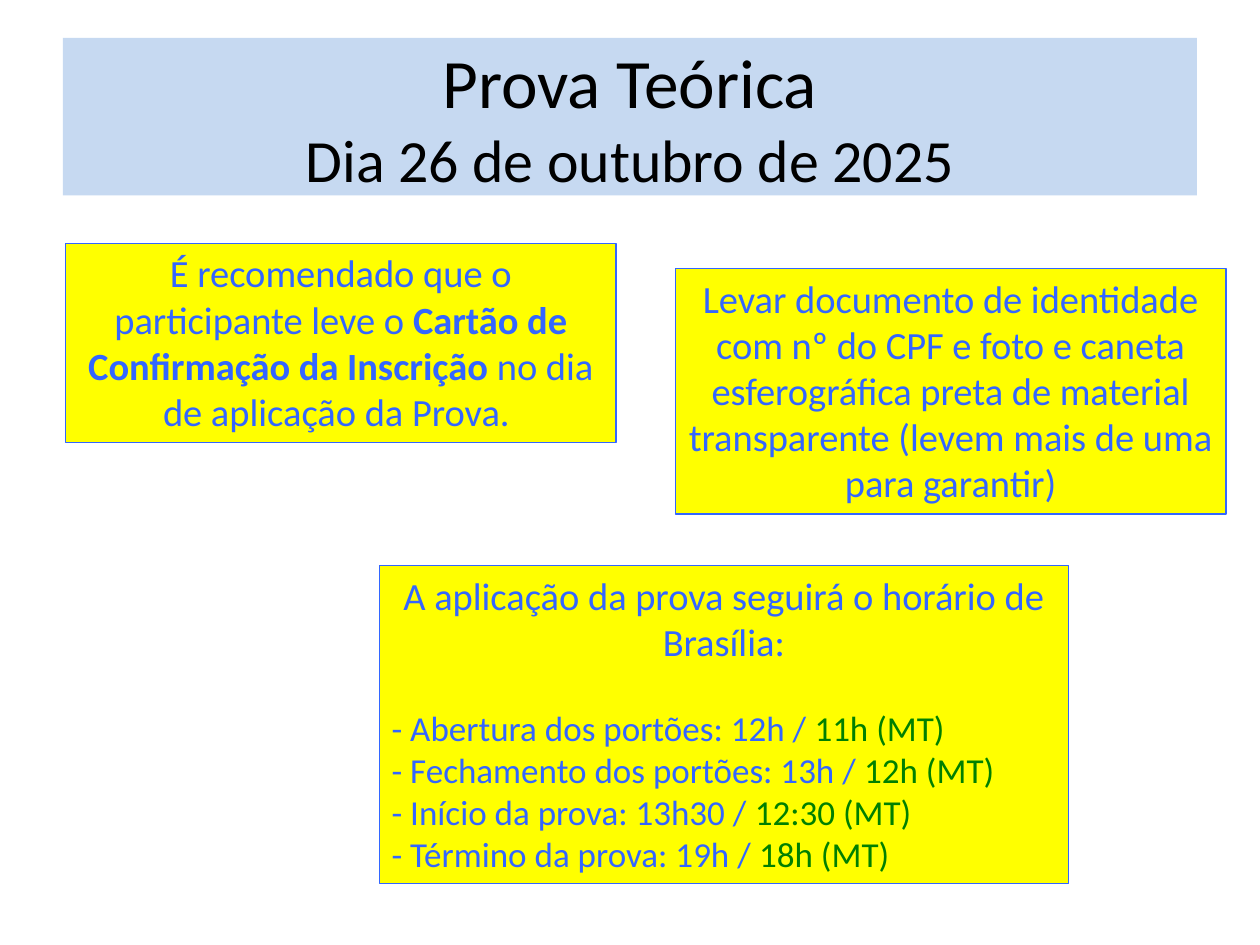
from pptx import Presentation
from pptx.dml.color import RGBColor
from pptx.enum.text import MSO_ANCHOR, PP_ALIGN
from pptx.util import Inches, Pt

CENTER, LEFT = PP_ALIGN.CENTER, PP_ALIGN.LEFT
MIDDLE, TOP = MSO_ANCHOR.MIDDLE, MSO_ANCHOR.TOP
BLANK_LAYOUT = 6
FONT = "Calibri"
COLORS = {
    "title_fill": "C6D9F1",
    "title_text": "000000",
    "note_fill": "FFFF00",
    "note_blue": "3366FF",
    "local_time": "008000",
}

SCHEDULE = [
    ("Abertura dos portões: 12h", "11h"),
    ("Fechamento dos portões: 13h", "12h"),
    ("Início da prova: 13h30", "12:30"),
    ("Término da prova: 19h", "18h"),
]


def color(name):
    return RGBColor.from_string(COLORS[name])


def add_box(slide, left, top, width, height, fill, line=None, anchor=TOP, margin=0.05):
    """Add a filled text box and return its text frame."""
    shape = slide.shapes.add_textbox(
        Inches(left), Inches(top), Inches(width), Inches(height))
    shape.fill.solid()
    shape.fill.fore_color.rgb = color(fill)
    if line:
        shape.line.color.rgb = color(line)
        shape.line.width = Pt(0.75)
    frame = shape.text_frame
    frame.word_wrap = True
    frame.vertical_anchor = anchor
    frame.margin_top = frame.margin_bottom = Inches(margin)
    return frame


def add_note(slide, left, top, width, height):
    return add_box(slide, left, top, width, height, "note_fill", line="note_blue")


def add_paragraph(frame, align=CENTER, space_before=0):
    """Use the empty first paragraph, or append a new one."""
    first = frame.paragraphs[0]
    paragraph = frame.add_paragraph() if first.runs else first
    paragraph.alignment = align
    paragraph.space_before = Pt(space_before)
    return paragraph


def add_text(paragraph, text, size=22, text_color="note_blue", bold=False):
    run = paragraph.add_run()
    run.text = text
    run.font.name = FONT
    run.font.size = Pt(size)
    run.font.bold = bold
    run.font.color.rgb = color(text_color)


def main():
    presentation = Presentation()
    presentation.slide_width = Inches(10)
    presentation.slide_height = Inches(7.5)
    slide = presentation.slides.add_slide(presentation.slide_layouts[BLANK_LAYOUT])

    # Title band
    title = add_box(slide, 0.5, 0.3, 9, 1.25, "title_fill", anchor=MIDDLE, margin=0)
    for text, size in (("Prova Teórica", 39.6), ("Dia 26 de outubro de 2025", 34.2)):
        add_text(add_paragraph(title), text, size=size, text_color="title_text")

    # Confirmation card
    card = add_paragraph(add_note(slide, 0.52, 1.93, 4.37, 1.58))
    add_text(card, "É recomendado que o participante leve o ")
    add_text(card, "Cartão de Confirmação da Inscrição", bold=True)
    add_text(card, " no dia de aplicação da Prova. ")

    # Exam times, in Brasília and local time
    times = add_note(slide, 3.01, 4.49, 5.47, 2.52)
    add_text(add_paragraph(times), "A aplicação da prova seguirá o horário de Brasília:")
    for index, (event, local_time) in enumerate(SCHEDULE):
        paragraph = add_paragraph(times, LEFT, space_before=0 if index else 24)
        add_text(paragraph, f"- {event} / ", size=20)
        add_text(paragraph, f"{local_time} (MT)", size=20, text_color="local_time")

    # What to bring
    documents = add_note(slide, 5.36, 2.13, 4.37, 1.95)
    add_text(add_paragraph(documents),
             "Levar documento de identidade com nº do CPF e foto e caneta "
             "esferográfica preta de material transparente "
             "(levem mais de uma para garantir)")

    presentation.save("out.pptx")


if __name__ == "__main__":
    main()
